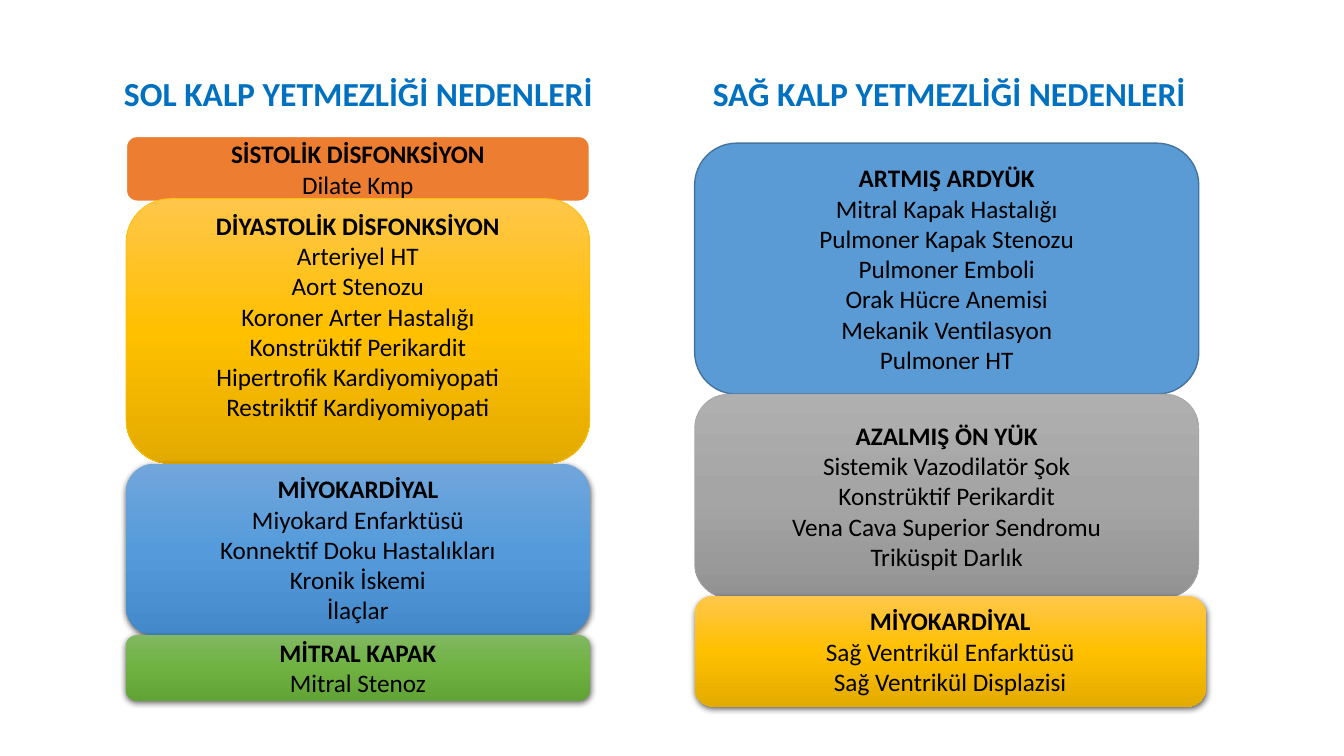
"""Build a slide that lists the causes of left and right heart failure."""
from copy import deepcopy
from dataclasses import dataclass
from typing import Optional

from lxml.etree import SubElement
from pptx import Presentation
from pptx.dml.color import RGBColor
from pptx.enum.shapes import MSO_SHAPE
from pptx.enum.text import MSO_ANCHOR, PP_ALIGN
from pptx.oxml.ns import qn
from pptx.shapes.autoshape import Shape
from pptx.slide import Slide
from pptx.text.text import TextFrame
from pptx.util import Emu, Pt

EMU_PER_PX = 9144
FONT = "Calibri"

BLACK = RGBColor(0x00, 0x00, 0x00)
WHITE = RGBColor(0xFF, 0xFF, 0xFF)
HEADING_BLUE = RGBColor(0x00, 0x70, 0xC0)
ORANGE = RGBColor(0xED, 0x7D, 0x31)
BLUE = RGBColor(0x5B, 0x9B, 0xD5)
DARK_BLUE = RGBColor(0x43, 0x73, 0x9E)
GOLD = RGBColor(0xFF, 0xC0, 0x00)
GRAY = RGBColor(0xA5, 0xA5, 0xA5)
GOLD_SHADES = (RGBColor(0xFF, 0xC6, 0x4B), GOLD, RGBColor(0xE3, 0xAB, 0x00))
BLUE_SHADES = (RGBColor(0x71, 0xA6, 0xDB), RGBColor(0x55, 0x9B, 0xDB), RGBColor(0x44, 0x8A, 0xCA))
GREEN_SHADES = (RGBColor(0x81, 0xB8, 0x61), RGBColor(0x6F, 0xB2, 0x42), RGBColor(0x62, 0xA3, 0x36))
GRAY_SHADES = (RGBColor(0xAF, 0xAF, 0xAF), GRAY, RGBColor(0x93, 0x93, 0x93))


@dataclass(frozen=True)
class Heading:
    """Title of one side of the heart."""
    text: str
    left: int
    width: int
    indent: int


@dataclass(frozen=True)
class CauseGroup:
    """Box with a group name and its causes; a group without border casts a shadow."""
    name: str
    causes: tuple[str, ...]
    left: int
    top: int
    width: int
    height: int
    shades: tuple[RGBColor, ...]
    border: Optional[RGBColor] = None
    border_pt: float = 0.5
    bottom_inset: int = 5


HEADINGS = (
    Heading("SOL KALP YETMEZLİĞİ NEDENLERİ", 60, 564, 63),
    Heading("SAĞ KALP YETMEZLİĞİ NEDENLERİ", 675, 567, 32),
)

CAUSE_GROUPS = (
    CauseGroup("SİSTOLİK DİSFONKSİYON", ("Dilate Kmp",),
               125, 135, 460, 65, (ORANGE,), WHITE, 1.5),
    CauseGroup("DİYASTOLİK DİSFONKSİYON",
               ("Arteriyel HT", "Aort Stenozu", "Koroner Arter Hastalığı",
                "Konstrüktif Perikardit", "Hipertrofik Kardiyomiyopati",
                "Restriktif Kardiyomiyopati"),
               125, 197, 460, 263, GOLD_SHADES, GOLD, bottom_inset=35),
    CauseGroup("MİYOKARDİYAL",
               ("Miyokard Enfarktüsü", "Konnektif Doku Hastalıkları",
                "Kronik İskemi", "İlaçlar"),
               125, 460, 460, 170, BLUE_SHADES),
    CauseGroup("MİTRAL KAPAK", ("Mitral Stenoz",),
               125, 630, 460, 65, GREEN_SHADES),
    CauseGroup("ARTMIŞ ARDYÜK",
               ("Mitral Kapak Hastalığı", "Pulmoner Kapak Stenozu", "Pulmoner Emboli",
                "Orak Hücre Anemisi", "Mekanik Ventilasyon", "Pulmoner HT"),
               689, 142, 500, 249, (BLUE,), DARK_BLUE, 1),
    CauseGroup("AZALMIŞ ÖN YÜK",
               ("Sistemik Vazodilatör Şok", "Konstrüktif Perikardit",
                "Vena Cava Superior Sendromu", "Triküspit Darlık"),
               689, 391, 500, 202, GRAY_SHADES, GRAY),
    CauseGroup("MİYOKARDİYAL", ("Sağ Ventrikül Enfarktüsü", "Sağ Ventrikül Displazisi"),
               689, 591, 507, 110, GOLD_SHADES),
)


def px(length: int) -> Emu:
    """Convert px to EMU."""
    return Emu(length * EMU_PER_PX)


def write_text(frame: TextFrame, lines: tuple[str, ...], *, size: int, color: RGBColor,
               align: PP_ALIGN, anchor: MSO_ANCHOR, line_spacing: float = 1.0) -> None:
    """Write one paragraph per line, with the first in bold."""
    frame.word_wrap = True
    frame.vertical_anchor = anchor
    for index, line in enumerate(lines):
        paragraph = frame.add_paragraph() if index else frame.paragraphs[0]
        paragraph.alignment = align
        paragraph.line_spacing = line_spacing
        run = paragraph.add_run()
        run.text = line
        run.font.name = FONT
        run.font.size = Pt(size)
        run.font.bold = index == 0
        run.font.color.rgb = color


def fill_shades(box: Shape, shades: tuple[RGBColor, ...]) -> None:
    """Fill with one plain colour or an even gradient from top to bottom."""
    if len(shades) == 1:
        box.fill.solid()
        box.fill.fore_color.rgb = shades[0]
        return
    box.fill.gradient()
    box.fill.gradient_angle = 270
    stop_list = box.element.spPr.find(qn("a:gradFill")).find(qn("a:gsLst"))
    for _ in shades[2:]:
        stop_list.append(deepcopy(stop_list[-1]))
    for index, (stop, shade) in enumerate(zip(box.fill.gradient_stops, shades)):
        stop.color.rgb = shade
        stop.position = index / (len(shades) - 1)


def cast_shadow(box: Shape) -> None:
    """Add a soft shadow below the box."""
    effects = box.element.spPr.find(qn("a:effectLst"))
    shadow = SubElement(effects, qn("a:outerShdw"), blurRad=str(Pt(4.5)),
                        dist=str(Pt(1.5)), dir="5400000", algn="ctr", rotWithShape="0")
    tone = SubElement(shadow, qn("a:srgbClr"), val=str(BLACK))
    SubElement(tone, qn("a:alpha"), val="63000")


def draw_heading(slide: Slide, heading: Heading) -> None:
    """Draw the title above one column."""
    title = slide.shapes.add_textbox(px(heading.left), px(28), px(heading.width), px(90))
    title.text_frame.margin_left = px(10 + heading.indent - 10)
    write_text(title.text_frame, (heading.text,), size=24, color=HEADING_BLUE,
               align=PP_ALIGN.LEFT, anchor=MSO_ANCHOR.BOTTOM, line_spacing=0.9)


def draw_cause_group(slide: Slide, group: CauseGroup) -> None:
    """Draw one rounded box of causes."""
    box = slide.shapes.add_shape(MSO_SHAPE.ROUNDED_RECTANGLE, px(group.left), px(group.top),
                                 px(group.width), px(group.height))
    box.shadow.inherit = False
    fill_shades(box, group.shades)
    if group.border is None:
        box.line.fill.background()
        cast_shadow(box)
    else:
        box.line.color.rgb = group.border
        box.line.width = Pt(group.border_pt)
    box.text_frame.margin_bottom = px(group.bottom_inset)
    write_text(box.text_frame, (group.name, *group.causes), size=18, color=BLACK,
               align=PP_ALIGN.CENTER, anchor=MSO_ANCHOR.MIDDLE)


def main() -> None:
    """Build and save the slide."""
    presentation = Presentation()
    presentation.slide_width = px(1333)
    presentation.slide_height = px(750)
    slide = presentation.slides.add_slide(presentation.slide_layouts[6])
    for heading in HEADINGS:
        draw_heading(slide, heading)
    for group in CAUSE_GROUPS:
        draw_cause_group(slide, group)
    presentation.save("out.pptx")


if __name__ == "__main__":
    main()
